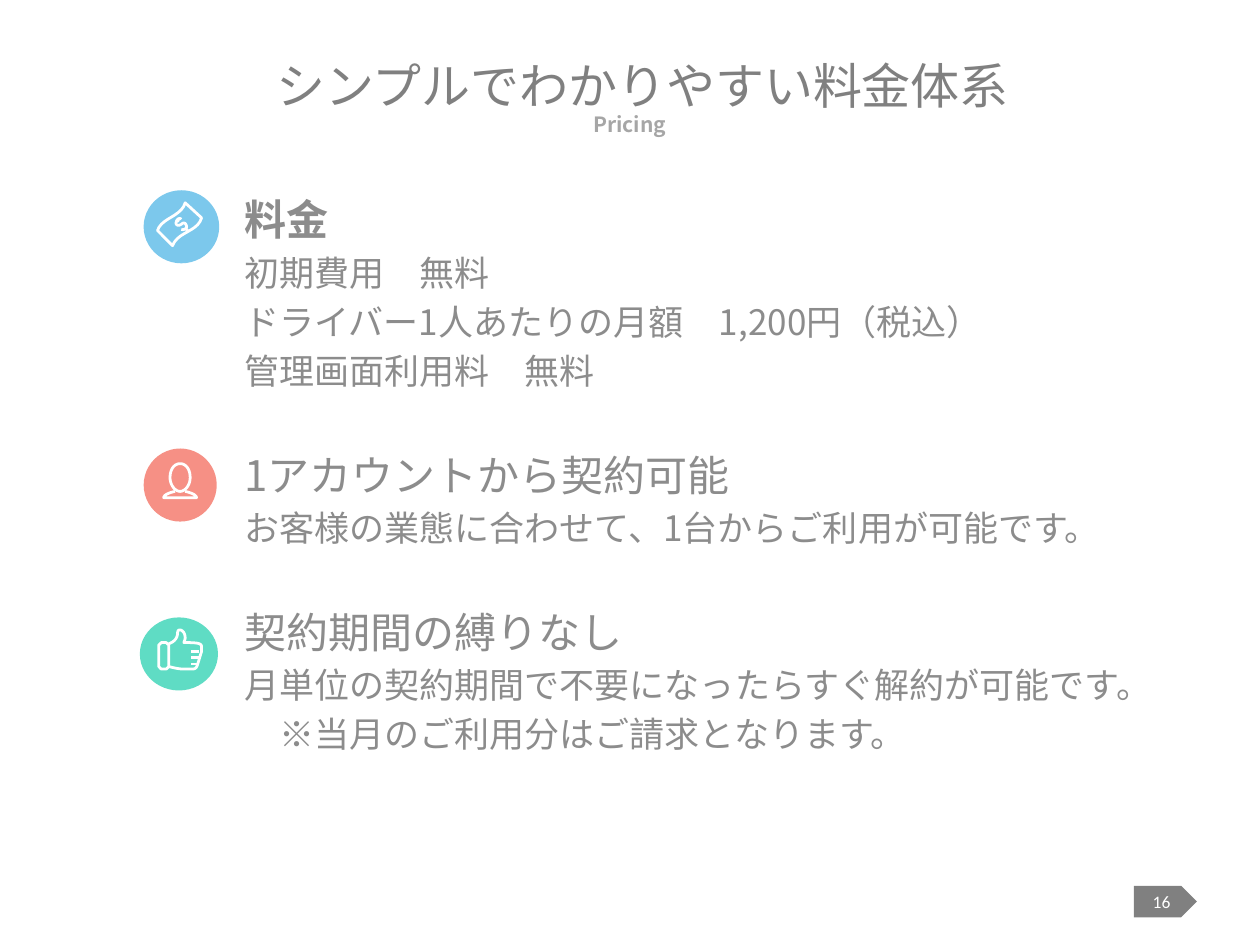
from lxml import etree
from pptx import Presentation
from pptx.dml.color import RGBColor
from pptx.enum.shapes import MSO_SHAPE
from pptx.enum.text import MSO_ANCHOR, PP_ALIGN
from pptx.oxml.ns import qn
from pptx.util import Inches, Pt

CENTER, LEFT = PP_ALIGN.CENTER, PP_ALIGN.LEFT
TOP, MIDDLE = MSO_ANCHOR.TOP, MSO_ANCHOR.MIDDLE
OVAL, PENTAGON = MSO_SHAPE.OVAL, MSO_SHAPE.PENTAGON
FONT, NUMBER_FONT = "Noto Sans CJK JP", "Calibri"
COLORS = {
    "title": "808080", "subtitle": "A6A6A6", "body": "8C8C8C", "white": "FFFFFF",
    "blue": "7CC8EC", "red": "F58377", "green": "4CD8BD",
}

# Content: heading, bold heading, detail lines
SECTIONS = [
    ("料金", True, ["初期費用　無料", "ドライバー1人あたりの月額　1,200円（税込）", "管理画面利用料　無料"]),
    ("1アカウントから契約可能", False, ["お客様の業態に合わせて、1台からご利用が可能です。"]),
    ("契約期間の縛りなし", False,
     ["月単位の契約期間で不要になったらすぐ解約が可能です。", "　※当月のご利用分はご請求となります。"]),
]

# Icon strokes in inches: a start point, then lines (x, y) or Bezier curves (six numbers)
BANKNOTE = [
    [(1.37, 1.95), (1.25, 1.83), (1.28, 1.73, 1.44, 1.72, 1.47, 1.61),
     (1.6, 1.73), (1.57, 1.84, 1.41, 1.84, 1.37, 1.95)],
    [(1.44, 1.82), (1.46, 1.83, 1.49, 1.81, 1.48, 1.79), (1.47, 1.76, 1.45, 1.77, 1.44, 1.78),
     (1.41, 1.8, 1.39, 1.78, 1.4, 1.76), (1.41, 1.73, 1.43, 1.73, 1.44, 1.74)],
    [(1.4, 1.74), (1.42, 1.76)],
    [(1.47, 1.81), (1.49, 1.83)],
]
PERSON = [
    [(1.43, 3.68), (1.48, 3.68, 1.51, 3.73, 1.51, 3.79), (1.51, 3.85, 1.47, 3.9, 1.43, 3.9),
     (1.39, 3.9, 1.35, 3.85, 1.35, 3.79), (1.35, 3.73, 1.38, 3.68, 1.43, 3.68)],
    [(1.39, 3.9), (1.34, 3.91, 1.3, 3.93, 1.3, 3.95), (1.56, 3.95),
     (1.56, 3.93, 1.52, 3.91, 1.47, 3.9)],
]
THUMB = [
    [(1.28, 5.1), (1.32, 5.1), (1.34, 5.12), (1.34, 5.29), (1.32, 5.31),
     (1.28, 5.31), (1.26, 5.29), (1.26, 5.12), (1.28, 5.1)],
    [(1.34, 5.11), (1.39, 5.09, 1.41, 5.06, 1.41, 5.02), (1.41, 4.98, 1.47, 5, 1.47, 5.06),
     (1.47, 5.08, 1.46, 5.09, 1.46, 5.1), (1.54, 5.1, 1.6, 5.1, 1.6, 5.13),
     (1.6, 5.17), (1.57, 5.27), (1.56, 5.31, 1.54, 5.31, 1.52, 5.31),
     (1.46, 5.31), (1.42, 5.31, 1.38, 5.3, 1.34, 5.29)],
] + [[(1.52, y), (1.58, y)] for y in (5.17, 5.22, 5.27)]

# Disc left, top, width, height; colour; opacity percent; strokes
ICONS = [
    ((1.14, 1.51, 0.6, 0.58), "blue", 100, BANKNOTE),
    ((1.14, 3.56, 0.58, 0.58), "red", 89, PERSON),
    ((1.11, 4.9, 0.62, 0.58), "green", 89, THUMB),
]


def style_text(para, size, color, bold=False, align=LEFT, font=FONT):
    para.alignment = align
    for span in para.runs:
        span.font.size, span.font.bold, span.font.name = Pt(size), bold, font
        span.font.color.rgb = RGBColor.from_string(COLORS[color])
        east_asian = etree.SubElement(span.font._element, qn("a:ea"))
        east_asian.set("typeface", font)


def add_text_box(slide, place, anchor=TOP):
    box = slide.shapes.add_textbox(*map(Inches, place))
    box.text_frame.word_wrap = True
    box.text_frame.vertical_anchor = anchor
    return box.text_frame


def add_filled_shape(shapes, kind, place, color):
    shape = shapes.add_shape(kind, *map(Inches, place))
    shape.shadow.inherit = False
    shape.fill.solid()
    shape.fill.fore_color.rgb = RGBColor.from_string(COLORS[color])
    shape.line.fill.background()
    return shape


def trace(stroke, steps=10):
    points = [stroke[0]]
    for part in stroke[1:]:
        if len(part) == 2:
            points.append(part)
            continue
        controls = [points[-1], part[:2], part[2:4], part[4:]]
        for step in range(1, steps + 1):
            t = step / steps
            weights = ((1 - t) ** 3, 3 * t * (1 - t) ** 2, 3 * t * t * (1 - t), t ** 3)
            points.append(tuple(sum(w * c[axis] for w, c in zip(weights, controls))
                                for axis in (0, 1)))
    return [(Inches(x), Inches(y)) for x, y in points]


def add_icon(slide, place, color, opacity, strokes):
    group = slide.shapes.add_group_shape()
    disc = add_filled_shape(group.shapes, OVAL, place, color)
    if opacity < 100:
        fill_color = disc._element.spPr.find(qn("a:solidFill"))[0]
        etree.SubElement(fill_color, qn("a:alpha")).set("val", str(opacity * 1000))
    for stroke in strokes:
        points = trace(stroke)
        builder = group.shapes.build_freeform(*points[0])
        builder.add_line_segments(points[1:], close=stroke[0] == stroke[-1][-2:])
        outline = builder.convert_to_shape()
        outline.shadow.inherit = False
        outline.fill.background()
        outline.line.color.rgb = RGBColor.from_string(COLORS["white"])
        outline.line.width = Pt(1.6)


deck = Presentation()
deck.slide_width, deck.slide_height = Inches(10), Inches(7.5)
page = deck.slides.add_slide(deck.slide_layouts[6])

# Page number
tag = add_filled_shape(page.shapes, PENTAGON, (9, 7.03, 0.5, 0.25), "title")
tag.text_frame.margin_left = tag.text_frame.margin_right = 0
tag.text_frame.margin_top = tag.text_frame.margin_bottom = 0
tag.text_frame.vertical_anchor = MIDDLE
tag.text_frame.text = "16"
style_text(tag.text_frame.paragraphs[0], 10, "white", align=CENTER, font=NUMBER_FONT)

# Pricing sections
body = add_text_box(page, (1.84, 1.49, 7.58, 5.58))
lines = []
for heading, bold, details in SECTIONS:
    lines.append((heading, 24, bold, 33))
    lines += [(detail, 20, False, 4) for detail in details]
for index, (text, size, bold, gap) in enumerate(lines):
    para = body.add_paragraph() if index else body.paragraphs[0]
    para.text = text
    if index:
        para.space_before = Pt(gap)
    style_text(para, size, "body", bold)

# Title and subtitle
for text, place, anchor, size, color, bold in [
    ("シンプルでわかりやすい料金体系", (0.6, 0.05, 9, 1.25), MIDDLE, 28, "title", False),
    ("Pricing", (0.5, 0.84, 9, 0.33), TOP, 12, "subtitle", True),
]:
    frame = add_text_box(page, place, anchor)
    frame.text = text
    style_text(frame.paragraphs[0], size, color, bold, CENTER)

# Icons
for icon in ICONS:
    add_icon(page, *icon)

deck.save("out.pptx")
